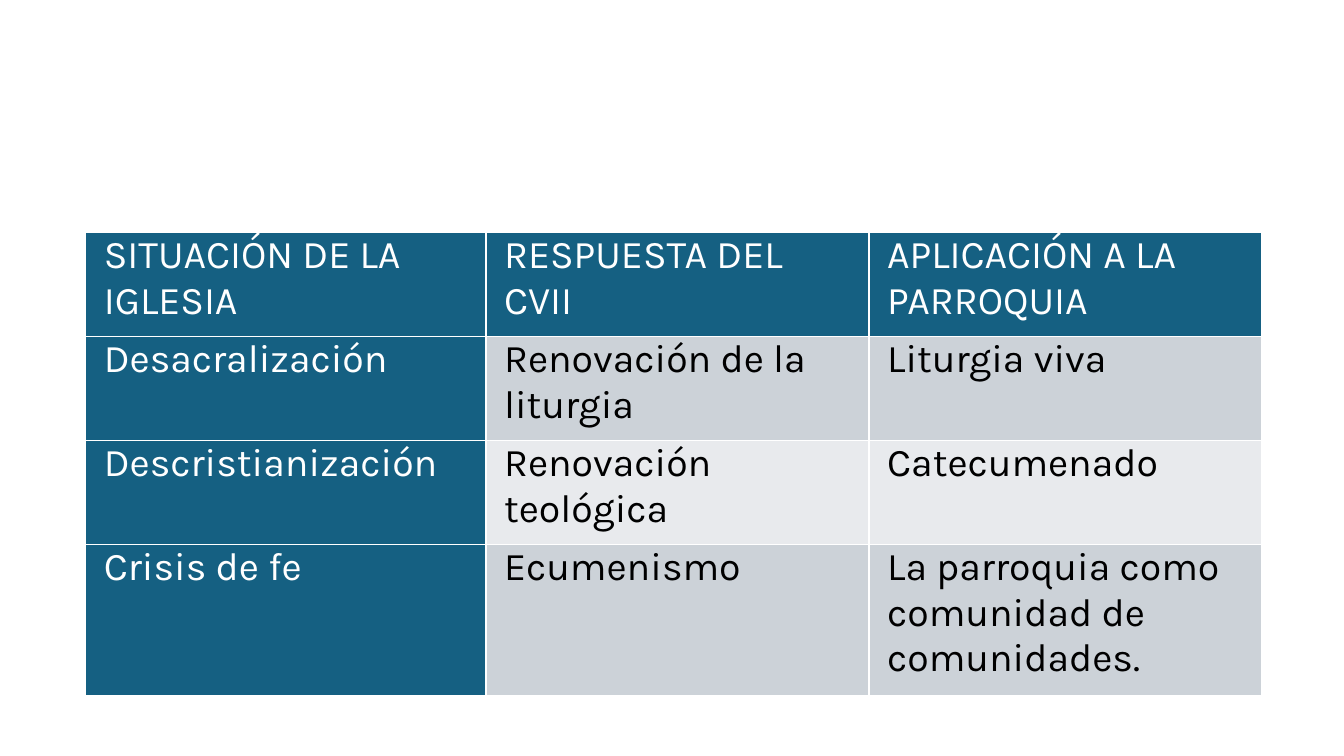
from dataclasses import dataclass

from lxml.etree import SubElement
from pptx import Presentation
from pptx.dml.color import RGBColor
from pptx.oxml.ns import qn
from pptx.util import Inches, Pt


@dataclass(frozen=True)
class Theme:
    font: str = "Karla"
    size: int = 28
    blue: str = "156082"
    dark: str = "CCD2D8"
    pale: str = "E8EAED"
    white: str = "FFFFFF"
    black: str = "000000"
    rule: int = 1


THEME = Theme()
PLACE = [Inches(n) for n in (0.85, 2.31, 11.66, 4.59)]
WIDTHS = (3.97, 3.8, 3.89)
HEIGHTS = (1.03, 1.03, 1.03, 1.5)
PADS = {
    "margin_left": Inches(0.18),
    "margin_top": Inches(0),
    "margin_right": Inches(0.18),
    "margin_bottom": Inches(0),
}
TYPE = {"name": THEME.font, "size": Pt(THEME.size), "bold": False}
ROWS = (
    ("SITUACIÓN DE LA IGLESIA", "RESPUESTA DEL CVII", "APLICACIÓN A LA PARROQUIA"),
    ("Desacralización", "Renovación de la liturgia", "Liturgia viva"),
    ("Descristianización", "Renovación teológica", "Catecumenado"),
    ("Crisis de fe", "Ecumenismo", "La parroquia como comunidad de comunidades."),
)


def apply(target, values):
    for name, value in values.items():
        setattr(target, name, value)


def add_rules(cell):
    props = cell._tc.get_or_add_tcPr()
    for side in ("L", "R", "T", "B"):
        line = SubElement(props, qn(f"a:ln{side}"), w=str(Pt(THEME.rule)))
        fill = SubElement(line, qn("a:solidFill"))
        SubElement(fill, qn("a:srgbClr"), val=THEME.white)


def pick_tones(row, col):
    if row == 0 or col == 0:
        return THEME.blue, THEME.white
    return (THEME.dark if row % 2 else THEME.pale), THEME.black


def fill_cell(cell, text, back, ink):
    apply(cell, PADS)
    add_rules(cell)
    cell.fill.solid()
    cell.fill.fore_color.rgb = RGBColor.from_string(back)
    cell.text = text
    font = cell.text_frame.paragraphs[0].runs[0].font
    apply(font, TYPE)
    font.color.rgb = RGBColor.from_string(ink)


def add_grid(slide):
    grid = slide.shapes.add_table(len(ROWS), len(WIDTHS), *PLACE).table
    apply(grid, {"first_row": True, "first_col": True, "horz_banding": True})
    for col, width in zip(grid.columns, WIDTHS):
        col.width = Inches(width)
    for row, height in zip(grid.rows, HEIGHTS):
        row.height = Inches(height)
    for row, texts in enumerate(ROWS):
        for col, text in enumerate(texts):
            fill_cell(grid.cell(row, col), text, *pick_tones(row, col))


def main():
    deck = Presentation()
    apply(deck, {"slide_width": Inches(13.33), "slide_height": Inches(7.5)})
    slide = deck.slides.add_slide(deck.slide_layouts[6])
    add_grid(slide)
    deck.save("out.pptx")


if __name__ == "__main__":
    main()
